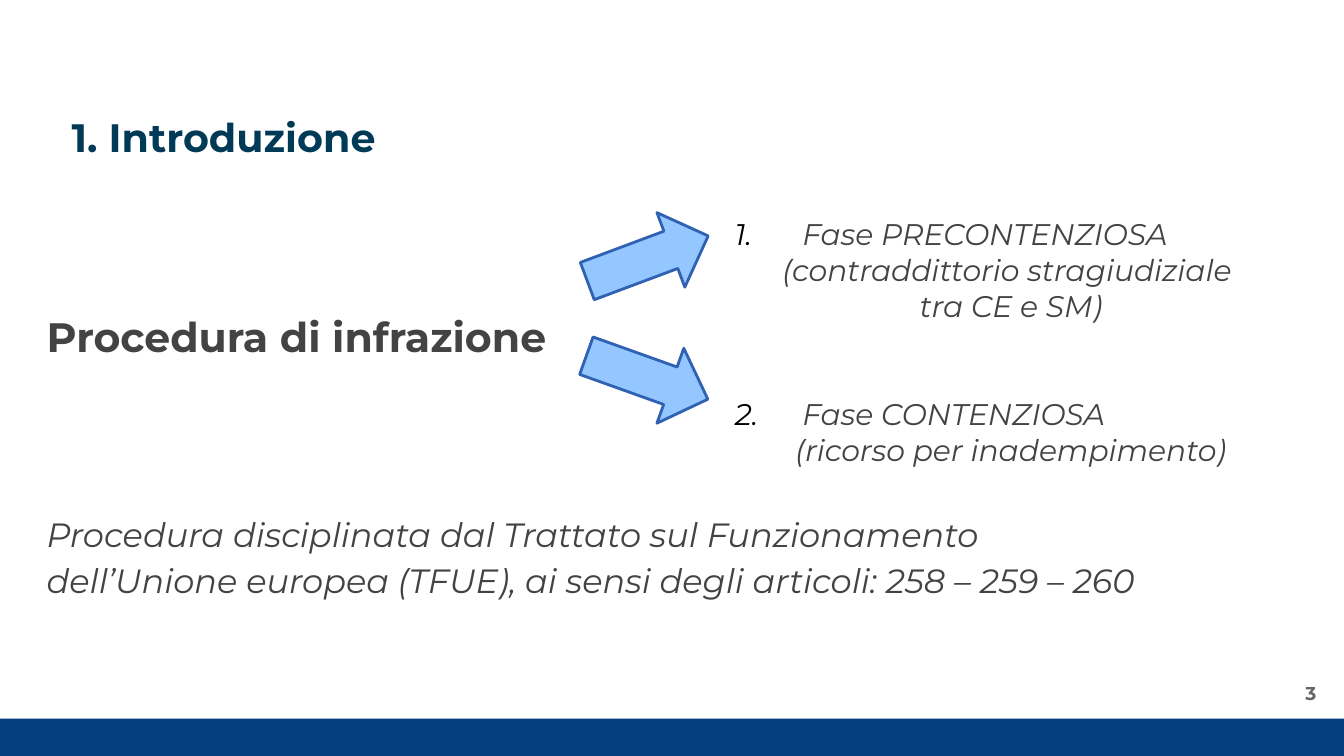
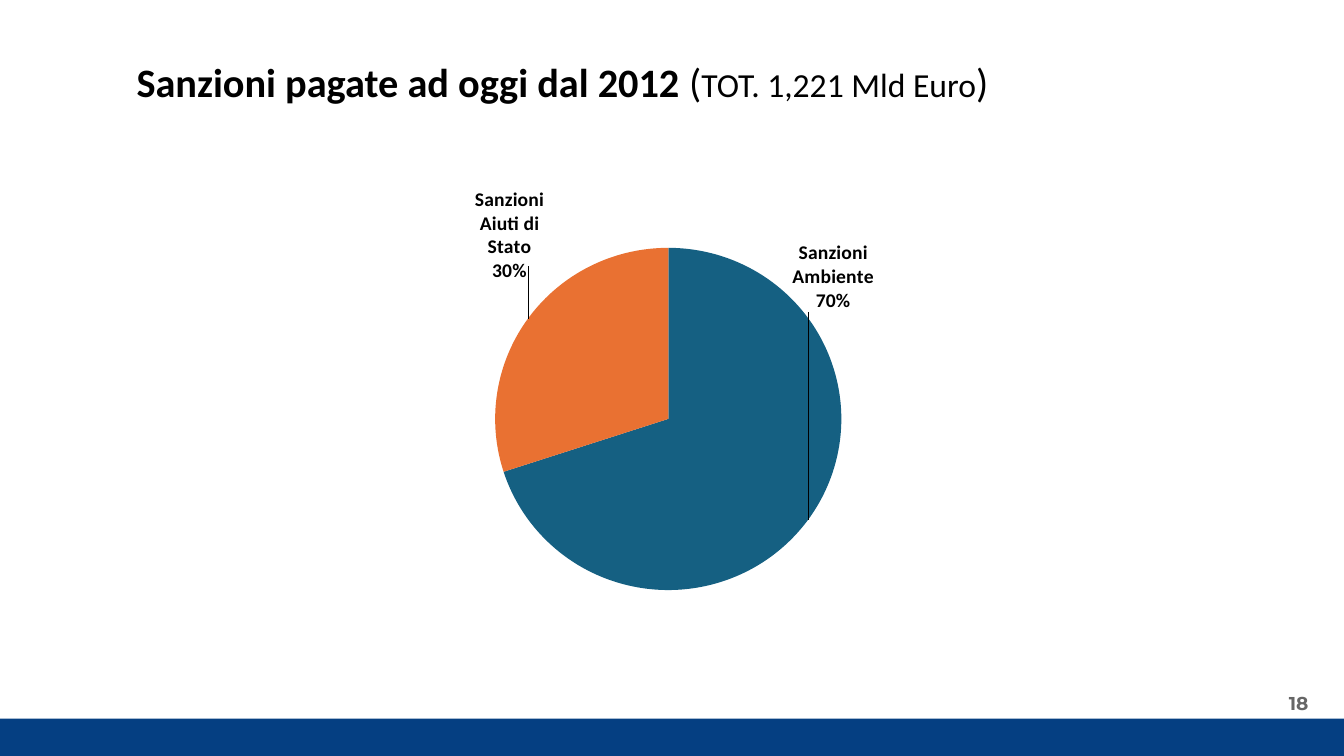
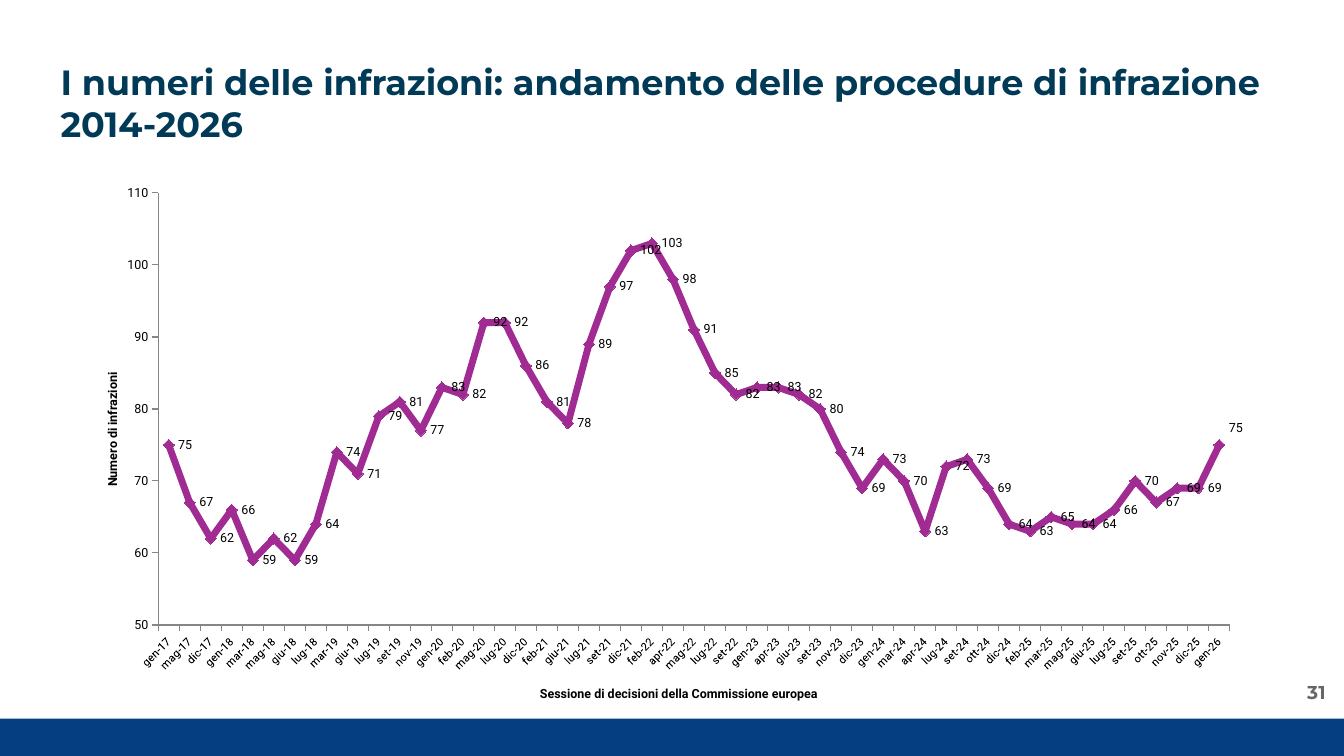
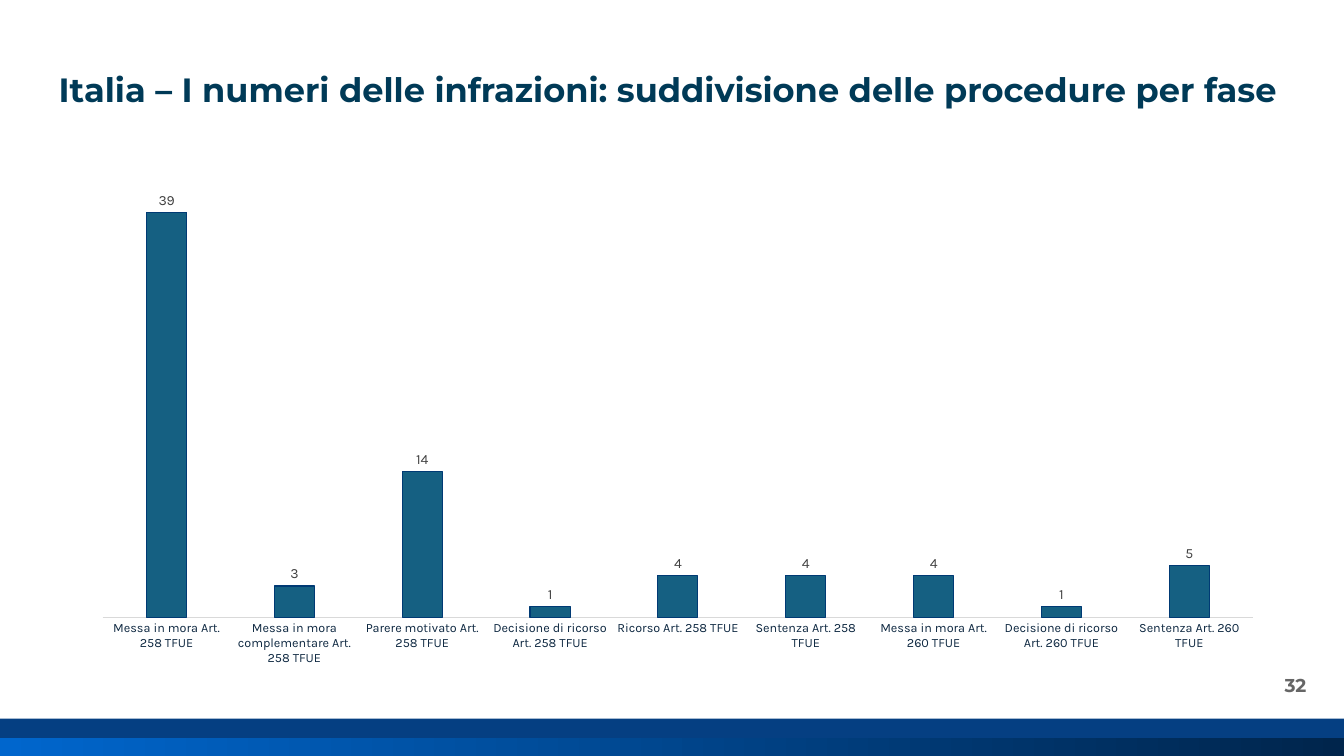
from lxml import etree
from pptx import Presentation
from pptx import util as u
from pptx.chart import data as chart_data
from pptx.dml.color import RGBColor
from pptx.enum import chart as kinds, shapes, text
from pptx.oxml import parse_xml
from pptx.oxml.ns import nsdecls, qn

COLORS = {
    "band": "053F82", "title": "003A57", "body": "434343", "number": "666666",
    "arrow": "94C6FF", "arrow_line": "3061B2", "black": "000000",
    "blue": "156082", "orange": "E97132", "purple": "A02B93", "bar_line": "003A74",
    "axis": "868686", "pale_axis": "D9D9D9", "navy": "0E2841", "label": "404040",
    "strip_dark": "00254C", "strip_light": "0066CD",
}
RGB = {name: RGBColor.from_string(value) for name, value in COLORS.items()}
LEFT, CENTER, RIGHT, JUSTIFY = (
    text.PP_ALIGN.LEFT, text.PP_ALIGN.CENTER, text.PP_ALIGN.RIGHT, text.PP_ALIGN.JUSTIFY)
TOP, MIDDLE = text.MSO_ANCHOR.TOP, text.MSO_ANCHOR.MIDDLE

deck = Presentation()
deck.slide_width, deck.slide_height = u.Inches(13.33), u.Inches(7.5)


def area(left, top, width, height):
    """Turn cells of a 100 by 100 grid over the slide into lengths."""
    column, row = deck.slide_width / 100, deck.slide_height / 100
    return [u.Emu(round(cells * unit))
            for cells, unit in zip((left, top, width, height), (column, row, column, row))]


def add_text(page, place, paragraphs, size, color, font="Montserrat", bold=False,
             italic=False, align=LEFT, anchor=TOP, inset=0.13):
    """Add a text box; each paragraph is a list of (words, size, bold) runs or a string."""
    frame = page.shapes.add_textbox(*area(*place)).text_frame
    frame.word_wrap = True
    frame.vertical_anchor = anchor
    frame.margin_left = frame.margin_right = u.Inches(inset)
    frame.margin_top = frame.margin_bottom = u.Inches(inset)
    for index, runs in enumerate(paragraphs):
        para = frame.add_paragraph() if index else frame.paragraphs[0]
        para.alignment = align
        for words, run_size, run_bold in [(runs, size, bold)] if isinstance(runs, str) else runs:
            span = para.add_run()
            span.text = words
            span.font.name, span.font.size = font, u.Pt(run_size)
            span.font.bold, span.font.italic = run_bold, italic
            span.font.color.rgb = RGB[color]
    return frame


# Pages: title place, title runs, title style, number, number place
pages = []
for place, runs, style, number, number_place in [
    ((4.35, 13.2, 93.15, 11.2), "1. Introduzione", {"size": 28.3},
     "3", (93.9, 87.47, 5.4, 8.4)),
    ((3, 6.27, 77.7, 7.87),
     [("Sanzioni pagate ad oggi dal 2012 ", 28.8, True), ("(", 28.8, False),
      ("TOT. 1,221 Mld Euro", 24, False), (")", 28.8, False)],
     {"size": 28.8, "color": "black", "font": "Calibri", "align": CENTER, "inset": 0.1},
     "18", (93.22, 90.13, 5.48, 5.6)),
    ((3.53, 6.27, 93.15, 11.2),
     "I numeri delle infrazioni: andamento delle procedure di infrazione 2014-2026",
     {"size": 25}, "31", (95.1, 87.47, 4.88, 8.13)),
    ((3.38, 7.33, 93.15, 11.2),
     "Italia – I numeri delle infrazioni: suddivisione delle procedure per fase",
     {"size": 24, "align": JUSTIFY}, "32", (93.08, 87.87, 5.48, 5.6)),
]:
    page = deck.slides.add_slide(deck.slide_layouts[6])
    band = page.shapes.add_shape(shapes.MSO_SHAPE.RECTANGLE, *area(0, 95.07, 100, 4.93))
    band.shadow.inherit = False
    band.fill.solid()
    band.fill.fore_color.rgb = RGB["band"]
    band.line.fill.background()
    add_text(page, place, [runs], **{"color": "title", "bold": True, **style})
    add_text(page, number_place, [number], 13.3, "number", bold=True,
             align=RIGHT, anchor=MIDDLE, inset=0.18)
    pages.append(page)
intro, fines, trend, phases = pages

# Introduction
add_text(intro, (2.5, 39.1, 53.2, 10.6), ["Procedura di infrazione"], 29.3, "body",
         bold=True, anchor=MIDDLE)
treaty = add_text(intro, (2.5, 62.8, 90.2, 20.93), [
    "Procedura disciplinata dal Trattato sul Funzionamento ",
    "dell’Unione europea (TFUE), ai sensi degli articoli: 258 – 259 – 260",
], 24, "body", italic=True, align=JUSTIFY, anchor=MIDDLE)
for para in treaty.paragraphs:
    para.line_spacing = 1.15

for left, top, turn in [(43.4, 28.93, 339.5), (43.35, 44.67, 19.7)]:
    arrow = intro.shapes.add_shape(shapes.MSO_SHAPE.RIGHT_ARROW, *area(left, top, 9.6, 10.53))
    arrow.shadow.inherit = False
    arrow.rotation = turn
    arrow.fill.solid()
    arrow.fill.fore_color.rgb = RGB["arrow"]
    arrow.line.color.rgb = RGB["arrow_line"]
    arrow.line.width = u.Pt(2)

steps = add_text(intro, (53.7, 27.6, 43.05, 35.3), [
    "Fase PRECONTENZIOSA", "(contraddittorio stragiudiziale ", "tra CE e SM)",
    "Fase CONTENZIOSA", "(ricorso per inadempimento)",
], 21.3, "body", italic=True, align=CENTER)
steps.margin_top = steps.margin_bottom = u.Inches(0.07)
for start, index in enumerate((0, 3), 1):
    para = steps.paragraphs[index]
    para.alignment = LEFT
    if index:
        para.space_before = u.Pt(52)
    properties = para._p.get_or_add_pPr()
    properties.set("marL", str(u.Inches(0.67)))
    properties.set("indent", str(-u.Inches(0.67)))
    bullet_color = etree.SubElement(properties, qn("a:buClr"))
    etree.SubElement(bullet_color, qn("a:srgbClr"), val=COLORS["black"])
    etree.SubElement(properties, qn("a:buFont"), typeface="Montserrat")
    etree.SubElement(properties, qn("a:buAutoNum"), type="arabicPeriod", startAt=str(start))

# Gradient strip of the last page
strip = phases.shapes.add_shape(shapes.MSO_SHAPE.RECTANGLE, *area(0, 97.6, 100, 2.4))
strip.shadow.inherit = False
strip.line.fill.background()
strip.fill.gradient()
strip.fill.gradient_angle = 180
for stop, name in zip(strip.fill.gradient_stops, ("strip_dark", "strip_light")):
    stop.color.rgb = RGB[name]

# Charts
months_by_year = {
    17: "gen mag dic", 18: "gen mar mag giu lug", 19: "mar giu lug set nov",
    20: "gen feb mag lug dic", 21: "feb giu lug set dic", 22: "feb apr mag lug set",
    23: "gen apr giu set nov dic", 24: "gen mar apr lug set ott dic",
    25: "feb mar mag giu lug set ott nov dic", 26: "gen",
}
sessions = [f"{month}-{year}" for year, months in months_by_year.items()
            for month in months.split()]
open_cases = [
    75, 67, 62, 66, 59, 62, 59, 64, 74, 71, 79, 81, 77, 83, 82, 92, 92, 86, 81, 78, 89, 97,
    102, 103, 98, 91, 85, 82, 83, 83, 82, 80, 74, 69, 73, 70, 63, 72, 73, 69, 64, 63, 65, 64,
    64, 66, 70, 67, 69, 69, 75]
phase_names = [
    "Messa in mora Art. 258 TFUE", "Messa in mora complementare Art. 258 TFUE",
    "Parere motivato Art. 258 TFUE", "Decisione di ricorso Art. 258 TFUE",
    "Ricorso Art. 258 TFUE", "Sentenza Art. 258 TFUE", "Messa in mora Art. 260 TFUE",
    "Decisione di ricorso Art. 260 TFUE", "Sentenza Art. 260 TFUE"]

charts = []
for page, kind, place, font, size, names, values, plot_area in [
    (fines, kinds.XL_CHART_TYPE.PIE, (30.45, 24.8, 38.55, 53.87), "Calibri", 14,
     ["Sanzioni Ambiente", "Sanzioni Aiuti di Stato"], [70, 30], (0, 0.15, 1, 0.85)),
    (trend, kinds.XL_CHART_TYPE.LINE_MARKERS, (7.58, 20.27, 84.9, 75.2), "Roboto", 9,
     sessions, open_cases, (0.05, 0.07, 0.95, 0.76)),
    (phases, kinds.XL_CHART_TYPE.COLUMN_CLUSTERED, (5.85, 18.4, 89.18, 71.07), "Karla", 10,
     phase_names, [39, 3, 14, 1, 4, 4, 4, 1, 5], (0.02, 0.02, 0.96, 0.87)),
]:
    source = chart_data.CategoryChartData()
    source.categories = names
    source.add_series("Series 1", values)
    chart = page.shapes.add_chart(kind, *area(*place), source).chart
    chart.has_title = chart.has_legend = False
    chart.font.name, chart.font.size = font, u.Pt(size)
    chart.font.color.rgb = RGB["black"]
    plot = chart.plots[0]
    plot.vary_by_categories = kind == kinds.XL_CHART_TYPE.PIE
    labels = plot.series[0].data_labels
    labels.show_value = kind != kinds.XL_CHART_TYPE.PIE
    labels.font.name, labels.font.size = font, u.Pt(size)
    plot_element = chart._chartSpace.chart.plotArea
    for old in plot_element.findall(qn("c:layout")):
        plot_element.remove(old)
    x, y, w, h = plot_area
    plot_element.insert(0, parse_xml(
        f'<c:layout {nsdecls("c")}><c:manualLayout><c:layoutTarget val="inner"/>'
        f'<c:xMode val="edge"/><c:yMode val="edge"/><c:x val="{x}"/><c:y val="{y}"/>'
        f'<c:w val="{w}"/><c:h val="{h}"/></c:manualLayout></c:layout>'))
    charts.append(chart)
pie, line, columns = charts

# Pie of the fines
pie_series = pie.plots[0].series[0]
for index, name in enumerate(("blue", "orange")):
    slice_fill = pie_series.points[index].format.fill
    slice_fill.solid()
    slice_fill.fore_color.rgb = RGB[name]
pie_labels = pie_series.data_labels
pie_labels.show_category_name = pie_labels.show_percentage = True
pie_labels.position = kinds.XL_LABEL_POSITION.OUTSIDE_END
pie_labels.font.bold = True

# Line of the open procedures
line_series = line.plots[0].series[0]
line_series.smooth = False
line_series.format.line.color.rgb = RGB["purple"]
line_series.format.line.width = u.Pt(5)
line_series.marker.style = kinds.XL_MARKER_STYLE.DIAMOND
line_series.marker.size = 8
line_series.marker.format.fill.solid()
line_series.marker.format.fill.fore_color.rgb = RGB["purple"]
line_series.marker.format.line.color.rgb = RGB["purple"]
line_series.data_labels.position = kinds.XL_LABEL_POSITION.RIGHT
for axis, title, size in [
    (line.category_axis, "Sessione di decisioni della Commissione europea", 8),
    (line.value_axis, "Numero di infrazioni", 9),
]:
    axis.has_major_gridlines = False
    axis.major_tick_mark = kinds.XL_TICK_MARK.OUTSIDE
    axis.format.line.color.rgb = RGB["axis"]
    axis.tick_labels.font.size = u.Pt(size)
    span = axis.axis_title.text_frame.paragraphs[0].add_run()
    span.text = title
    span.font.name, span.font.size, span.font.bold = "Roboto", u.Pt(9), True
    span.font.color.rgb = RGB["black"]
line.value_axis.minimum_scale, line.value_axis.maximum_scale = 50, 110
line.value_axis.major_unit = 10
line.category_axis._element.find(qn("c:txPr")).find(qn("a:bodyPr")).set("rot", "-2700000")

# Labels moved by shares of their chart
for series, index, dx, dy, position, value, share, size, bold in [
    (pie_series, 0, -0.04, -0.7, "outEnd", 0, 1, 14, 1),
    (pie_series, 1, 0.04, -0.12, "outEnd", 0, 1, 14, 1),
    (line_series, 50, 0, -0.03, "r", 1, 0, 9, 0),
]:
    font = "Calibri" if share else "Roboto"
    series.data_labels._element.insert(index if share else 0, parse_xml(
        f'<c:dLbl {nsdecls("c", "a")}><c:idx val="{index}"/>'
        f'<c:layout><c:manualLayout><c:x val="{dx}"/><c:y val="{dy}"/></c:manualLayout></c:layout>'
        f'<c:txPr><a:bodyPr/><a:p><a:pPr><a:defRPr sz="{size * 100}" b="{bold}">'
        f'<a:latin typeface="{font}"/></a:defRPr></a:pPr></a:p></c:txPr>'
        f'<c:dLblPos val="{position}"/><c:showLegendKey val="0"/><c:showVal val="{value}"/>'
        f'<c:showCatName val="{share}"/><c:showSerName val="0"/><c:showPercent val="{share}"/>'
        '<c:showBubbleSize val="0"/><c:separator>\n</c:separator></c:dLbl>'))

# Columns of the phases
columns.plots[0].gap_width, columns.plots[0].overlap = 219, -27
column_series = columns.plots[0].series[0]
column_series.format.fill.solid()
column_series.format.fill.fore_color.rgb = RGB["blue"]
column_series.format.line.color.rgb = RGB["bar_line"]
column_series.format.line.width = u.Pt(0.75)
column_series.data_labels.position = kinds.XL_LABEL_POSITION.OUTSIDE_END
column_series.data_labels.font.color.rgb = RGB["label"]
columns.value_axis.visible = columns.value_axis.has_major_gridlines = False
columns.value_axis.minimum_scale, columns.value_axis.maximum_scale = 0, 45
phase_axis = columns.category_axis
phase_axis.major_tick_mark = kinds.XL_TICK_MARK.NONE
phase_axis.format.line.color.rgb = RGB["pale_axis"]
phase_axis.format.line.width = u.Pt(0.75)
phase_axis.tick_labels.font.name, phase_axis.tick_labels.font.size = "Karla", u.Pt(9)
phase_axis.tick_labels.font.color.rgb = RGB["navy"]

deck.save("out.pptx")
